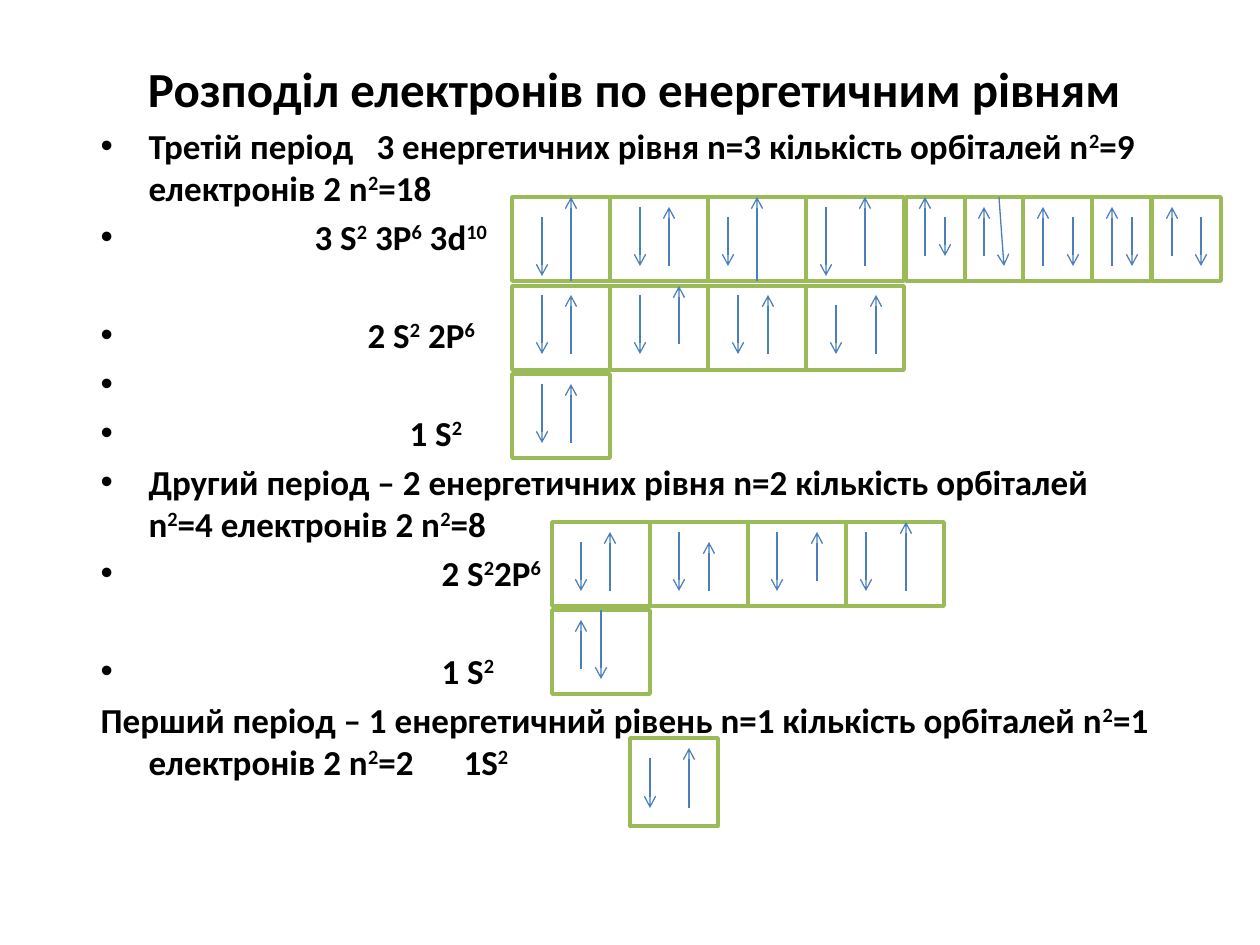
import pptx
import pptx.dml.color
import pptx.enum.shapes
import pptx.enum.text
import pptx.oxml
import pptx.oxml.ns
import pptx.util

PX = 914400 / 126
COLORS = {"text": "000000", "fill": "FFFFFF", "edge": "9BBB59", "spin": "4B7EBC"}
FONT = "Calibri"
WIDE, TALL = 98, 84

LINES = [
    ("Третій період\t3 енергетичних рівня n=3 кількість орбіталей n^2^=9 електронів 2 n^2^=18", 48, 0, 276),
    ("3 S^2^ 3P^6^ 3d^10^", 214, 4, None),
    ("2 S^2^ 2P^6^", 267, 32, None),
    ("\u00a0", 48, 4, None),
    ("1 S^2^", 309, 4, None),
    ("Другий період – 2 енергетичних рівня n=2 кількість орбіталей n^2^=4 електронів 2 n^2^=8", 48, 4, None),
    ("2 S^2^2P^6^", 341, 4, None),
    ("1 S^2^", 341, 32, None),
    ("Перший період – 1 енергетичний рівень n=1 кількість орбіталей n^2^=1 електронів 2 n^2^=2\t1S^2^", 48, 4, 464),
]

ROWS = [
    (512, 197, [
        [(30, 20, 79), (59, 84, 0)],
        [(30, 10, 69), (59, 69, 10)],
        [(20, 20, 69), (49, 84, 0)],
        [(20, 10, 79), (59, 69, 0)],
    ]),
    (512, 286, [
        [(30, 9, 68), (59, 68, 9)],
        [(30, 9, 68), (69, 58, 0)],
        [(30, 9, 68), (60, 68, 9)],
        [(30, 19, 68), (70, 68, 9)],
    ]),
    (512, 374, [[(30, 10, 69), (59, 69, 10)]]),
    (552, 522, [
        [(29, 20, 69), (58, 69, 10)],
        [(29, 10, 69), (59, 69, 20)],
        [(29, 10, 69), (69, 59, 10)],
        [(20, 10, 69), (60, 69, 0)],
    ]),
    (552, 610, [[(29, 59, 10), (49, 0, 69)]]),
]

CELLS = [
    (906, 197, 69, TALL, [(19, 59, 0), (39, 20, 59)]),
    (965, 197, 69, TALL, [(19, 59, 10), (34, 0, 69, 39)]),
    (1023, 197, 69, TALL, [(20, 69, 10), (50, 20, 69)]),
    (1092, 197, 59, TALL, [(20, 69, 10), (40, 20, 69)]),
    (1152, 197, 69, TALL, [(20, 59, 10), (49, 20, 69)]),
    (630, 738, 88, 88, [(20, 20, 70), (59, 70, 10)]),
]


def emu(px):
    """Turn pixels into EMU."""
    return pptx.util.Emu(round(px * PX))


def tint(name):
    """Look up a colour by its role."""
    return pptx.dml.color.RGBColor.from_string(COLORS[name])


def add_tag(parent, tag, **attrs):
    """Append a drawing element with attributes."""
    node = pptx.oxml.parse_xml(f"<a:{tag} {pptx.oxml.ns.nsdecls('a')}/>")
    for key, value in attrs.items():
        node.set(key, str(value))
    parent.append(node)
    return node


class Page:
    """Holds the style and the current slide."""

    def __init__(self, deck):
        """Start a slide with a title and a body."""
        self.slide = deck.slides.add_slide(deck.slide_layouts[1])

    def place(self, shape, left, top, width, height):
        """Move a placeholder and fix its text frame."""
        shape.left, shape.top = emu(left), emu(top)
        shape.width, shape.height = emu(width), emu(height)
        shape.text_frame.word_wrap = True
        shape.text_frame.auto_size = pptx.enum.text.MSO_AUTO_SIZE.NONE
        return shape.text_frame

    def style(self, run, size):
        """Format one run."""
        run.font.name, run.font.bold = FONT, True
        run.font.size = pptx.util.Pt(size)
        run.font.color.rgb = tint("text")

    def title(self, text, *area):
        """Fill the title."""
        frame = self.place(self.slide.shapes.title, *area)
        frame.text = text
        self.style(frame.paragraphs[0].runs[0], 28)

    def body(self, lines, *area):
        """Fill the body with indented lines."""
        frame = self.place(self.slide.placeholders[1], *area)
        for i, line in enumerate(lines):
            para = frame.add_paragraph() if i else frame.paragraphs[0]
            self.line(para, *line, bullet=i < len(lines) - 1)

    def line(self, para, text, indent, gap, stop, bullet):
        """Write one line, raising the parts between carets."""
        props = para._p.get_or_add_pPr()
        props.set("marL", str(emu(indent)))
        props.set("indent", str(emu(-indent if bullet or indent else 0)))
        if bullet:
            add_tag(props, "buChar", char="•")
        else:
            add_tag(props, "buNone")
        if stop:
            add_tag(add_tag(props, "tabLst"), "tab", pos=emu(stop), algn="l")
        para.space_before = pptx.util.Pt(gap)
        for i, part in enumerate(text.split("^")):
            if part:
                run = para.add_run()
                run.text = part
                self.style(run, 20)
                if i % 2:
                    run.font._element.set("baseline", "30000")

    def cell(self, left, top, width, height, spins):
        """Draw an orbital box with its arrows."""
        box = self.slide.shapes.add_shape(
            pptx.enum.shapes.MSO_SHAPE.FLOWCHART_PROCESS,
            emu(left), emu(top), emu(width), emu(height))
        box.shadow.inherit = False
        box.fill.solid()
        box.fill.fore_color.rgb = tint("fill")
        box.line.color.rgb = tint("edge")
        box.line.width = pptx.util.Pt(2)
        for x, start, end, *lean in spins:
            last = lean[0] if lean else x
            link = self.arrow(left + x, top + start, left + last, top + end)
            sides = {0: 0, height: 2} if x * 2 == width else {}
            if start in sides:
                link.begin_connect(box, sides[start])
            if end in sides:
                link.end_connect(box, sides[end])

    def arrow(self, *ends):
        """Draw one electron arrow."""
        link = self.slide.shapes.add_connector(
            pptx.enum.shapes.MSO_CONNECTOR.STRAIGHT, *map(emu, ends))
        link.line.color.rgb = tint("spin")
        link.line.width = pptx.util.Pt(0.75)
        add_tag(link.line._get_or_add_ln(), "tailEnd", type="arrow")
        add_tag(link._element.spPr, "effectLst")
        return link


def main():
    """Build and save the deck."""
    deck = pptx.Presentation()
    deck.slide_width, deck.slide_height = emu(1260), emu(945)
    page = Page(deck)
    page.title("Розподіл електронів по енергетичним рівням", 88, 38, 1092, 100)
    page.body(LINES, 88, 118, 1082, 708)
    for left, top, boxes in ROWS:
        for i, spins in enumerate(boxes):
            page.cell(left + i * WIDE, top, WIDE, TALL, spins)
    for cell in CELLS:
        page.cell(*cell)
    deck.save("out.pptx")


if __name__ == "__main__":
    main()
